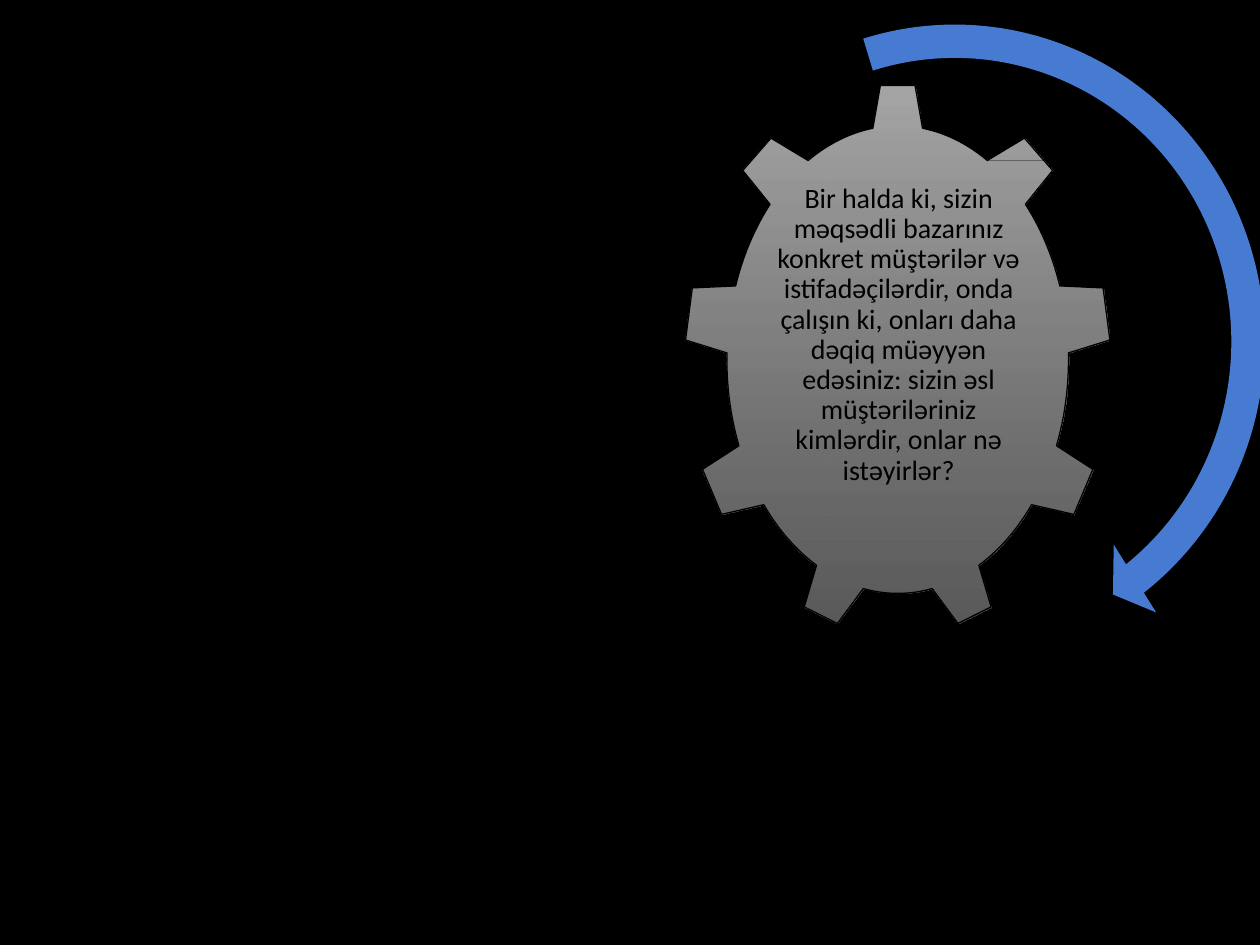
import pptx
import pptx.dml.color
import pptx.enum.shapes
import pptx.enum.text
import pptx.oxml
import pptx.oxml.ns
import pptx.util

Pt = pptx.util.Pt
RGB = pptx.dml.color.RGBColor
SHAPES = pptx.enum.shapes.MSO_SHAPE

BLACK = RGB(0x00, 0x00, 0x00)
LIGHT_GREY = RGB(0xA6, 0xA6, 0xA6)
DARK_GREY = RGB(0x79, 0x79, 0x79)
BLUE = RGB(0x47, 0x7B, 0xD1)

ADVICE = (
    "Bir halda ki, sizin məqsədli bazarınız konkret müştərilər və "
    "istifadəçilərdir, onda çalışın ki, onları daha dəqiq müəyyən edəsiniz: "
    "sizin əsl müştəriləriniz kimlərdir, onlar nə istəyirlər?"
)


def apply(target, values):
    for key, value in values.items():
        setattr(target, key, value)


class SlideBuilder:
    frame_format = {
        "word_wrap": True,
        "vertical_anchor": pptx.enum.text.MSO_ANCHOR.MIDDLE,
        "margin_left": Pt(1.5),
        "margin_top": Pt(1.5),
        "margin_right": Pt(1.5),
        "margin_bottom": Pt(25.5),
    }
    paragraph_format = {
        "alignment": pptx.enum.text.PP_ALIGN.CENTER,
        "line_spacing": 0.9,
    }
    font_format = {"name": "Calibri", "size": Pt(16)}

    def __init__(self, deck, background):
        self.slide = deck.slides.add_slide(deck.slide_layouts[6])
        fill = self.slide.background.fill
        fill.solid()
        fill.fore_color.rgb = background

    def shape(self, kind, box):
        shape = self.slide.shapes.add_shape(kind, *map(Pt, box))
        shape.shadow.inherit = False
        return shape

    def gear(self, box, colors, end_alpha, outline):
        gear = self.shape(SHAPES.GEAR_9, box)
        gear.fill.gradient()
        gear.fill.gradient_angle = 270
        stops = gear.fill.gradient_stops
        for stop, position, color in zip(stops, (0, 1), colors):
            apply(stop, {"position": position})
            stop.color.rgb = color
        color_tag = gear.element.spPr.findall(".//" + pptx.oxml.ns.qn("a:srgbClr"))[-1]
        alpha = pptx.oxml.parse_xml(
            f'<a:alpha {pptx.oxml.ns.nsdecls("a")} val="{end_alpha * 1000}"/>'
        )
        color_tag.append(alpha)
        gear.line.color.rgb = outline
        gear.line.width = Pt(0.75)

    def text(self, box, wording, color):
        frame = self.slide.shapes.add_textbox(*map(Pt, box)).text_frame
        apply(frame, self.frame_format)
        paragraph = frame.paragraphs[0]
        apply(paragraph, self.paragraph_format)
        run = paragraph.add_run()
        run.text = wording
        apply(run.font, self.font_format)
        run.font.color.rgb = color

    def circular_arrow(self, box, adjustments, color):
        arrow = self.shape(SHAPES.CIRCULAR_ARROW, box)
        for index, value in enumerate(adjustments):
            arrow.adjustments[index] = value
        arrow.fill.solid()
        arrow.fill.fore_color.rgb = color
        arrow.line.fill.background()


def main():
    deck = pptx.Presentation()
    apply(deck, {"slide_width": Pt(720), "slide_height": Pt(540)})
    builder = SlideBuilder(deck, BLACK)
    builder.gear((391, 47.5, 244, 316), (LIGHT_GREY, DARK_GREY), 74, BLACK)
    builder.text((440.5, 117.5, 146, 172), ADVICE, BLACK)
    builder.circular_arrow(
        (355, 0.7, 381, 389), (0.05, 3.13, 31.64, 151.93, 0.06), BLUE
    )
    deck.save("out.pptx")


if __name__ == "__main__":
    main()
